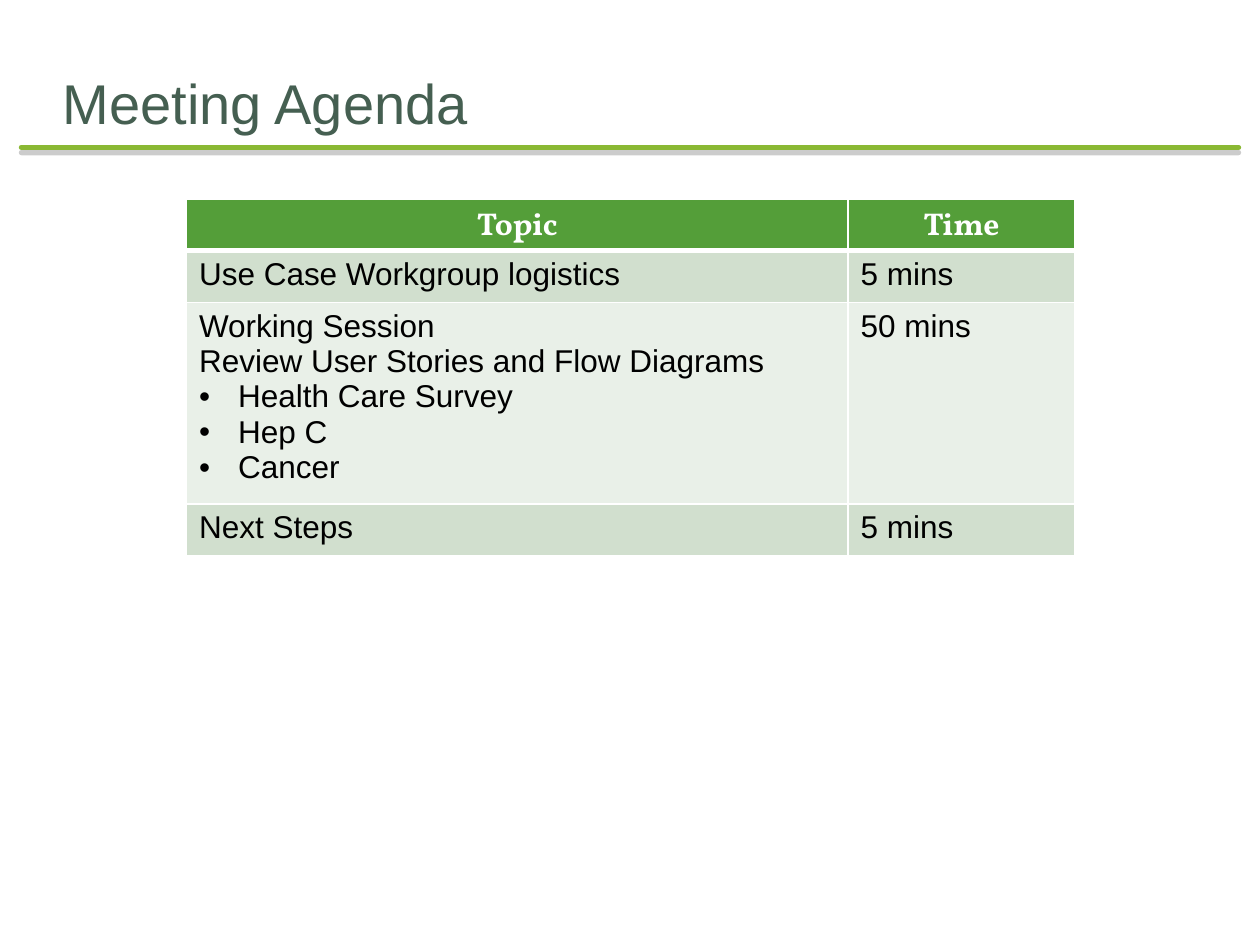
from lxml import etree
from pptx import Presentation
from pptx import util as u
from pptx.dml.color import RGBColor
from pptx.enum import shapes, text
from pptx.oxml import parse_xml
from pptx.oxml.ns import nsdecls, qn

# Content: each cell is a list of lines; a line starting with the bullet is a list item
BULLET = "•"
TITLE = "Meeting Agenda"
AGENDA = [
    (["Topic"], ["Time"]),
    (["Use Case Workgroup logistics"], ["5 mins"]),
    (["Working Session", "Review User Stories and Flow Diagrams",
      "•Health Care Survey", "•Hep C", "•Cancer"], ["50 mins"]),
    (["Next Steps"], ["5 mins"]),
]
COLUMN_WIDTHS = [5.25, 1.8]
ROW_HEIGHTS = [0.41, 0.41, 1.5, 0.41]

THEME = {
    "title": "455F51", "rule": "8AB833", "shadow": "808080",
    "header": "549E39", "bands": ["D1DFCE", "E9F0E8"],
    "white": "FFFFFF", "body": "000000",
    "font": "Arial", "header_font": "Vollkorn",
    "title_size": 32, "table_size": 18,
}


def style_runs(paragraph, font, size, color, bold=False):
    for run in paragraph.runs:
        run.font.name = font
        run.font.size = u.Pt(size)
        run.font.bold = bold
        run.font.color.rgb = RGBColor.from_string(color)


def add_rule(slide):
    rule = slide.shapes.add_connector(
        shapes.MSO_CONNECTOR.STRAIGHT,
        u.Inches(0.17), u.Inches(1.17), u.Inches(9.83), u.Inches(1.17))
    rule.line.color.rgb = RGBColor.from_string(THEME["rule"])
    rule.line.width = u.Pt(3)
    properties = rule._element.spPr
    properties.find(qn("a:ln")).set("cap", "rnd")
    properties.append(parse_xml(
        f'<a:effectLst {nsdecls("a")}>'
        f'<a:outerShdw dist="{u.Pt(3)}" dir="5400000" rotWithShape="0">'
        f'<a:srgbClr val="{THEME["shadow"]}"><a:alpha val="40000"/></a:srgbClr>'
        '</a:outerShdw></a:effectLst>'))


def add_title(slide):
    box = slide.shapes.add_textbox(
        u.Inches(0.5), u.Inches(0.5), u.Inches(9), u.Inches(0.58))
    frame = box.text_frame
    frame.word_wrap = True
    frame.vertical_anchor = text.MSO_ANCHOR.BOTTOM
    frame.margin_left = frame.margin_right = frame.margin_bottom = 0
    frame.margin_top = u.Inches(0.05)
    frame.text = TITLE
    style_runs(frame.paragraphs[0], THEME["font"], THEME["title_size"], THEME["title"])


def set_borders(cell, bottom):
    properties = cell._tc.get_or_add_tcPr()
    widths = {"lnL": 1, "lnR": 1, "lnT": 1, "lnB": bottom}
    for position, (side, width) in enumerate(widths.items()):
        properties.insert(position, parse_xml(
            f'<a:{side} {nsdecls("a")} w="{u.Pt(width)}"><a:solidFill>'
            f'<a:srgbClr val="{THEME["white"]}"/></a:solidFill></a:{side}>'))


def add_bullet(paragraph):
    properties = paragraph._p.get_or_add_pPr()
    indent = u.Inches(0.31)
    properties.set("marL", str(indent))
    properties.set("indent", str(-indent))
    etree.SubElement(properties, qn("a:buFont")).set("typeface", THEME["font"])
    etree.SubElement(properties, qn("a:buChar")).set("char", BULLET)


def fill_cell(cell, lines, row_index):
    is_header = row_index == 0
    fill = THEME["header"] if is_header else THEME["bands"][(row_index - 1) % 2]
    cell.fill.solid()
    cell.fill.fore_color.rgb = RGBColor.from_string(fill)
    set_borders(cell, bottom=3 if is_header else 1)
    cell.text_frame.text = "\n".join(line.lstrip(BULLET) for line in lines)
    for line, paragraph in zip(lines, cell.text_frame.paragraphs):
        if line.startswith(BULLET):
            add_bullet(paragraph)
        if is_header:
            paragraph.alignment = text.PP_ALIGN.CENTER
            style_runs(paragraph, THEME["header_font"], THEME["table_size"],
                       THEME["white"], bold=True)
        else:
            style_runs(paragraph, THEME["font"], THEME["table_size"], THEME["body"])


def add_agenda(slide):
    table = slide.shapes.add_table(
        len(AGENDA), len(COLUMN_WIDTHS), u.Inches(1.48), u.Inches(1.58),
        u.Inches(sum(COLUMN_WIDTHS)), u.Inches(sum(ROW_HEIGHTS))).table
    for column, width in zip(table.columns, COLUMN_WIDTHS):
        column.width = u.Inches(width)
    for row_index, (row, height) in enumerate(zip(table.rows, ROW_HEIGHTS)):
        row.height = u.Inches(height)
        for cell, lines in zip(row.cells, AGENDA[row_index]):
            fill_cell(cell, lines, row_index)


def main():
    presentation = Presentation()
    presentation.slide_width = u.Inches(10)
    presentation.slide_height = u.Inches(7.5)
    slide = presentation.slides.add_slide(presentation.slide_layouts[6])
    add_rule(slide)
    add_title(slide)
    add_agenda(slide)
    presentation.save("out.pptx")


if __name__ == "__main__":
    main()
